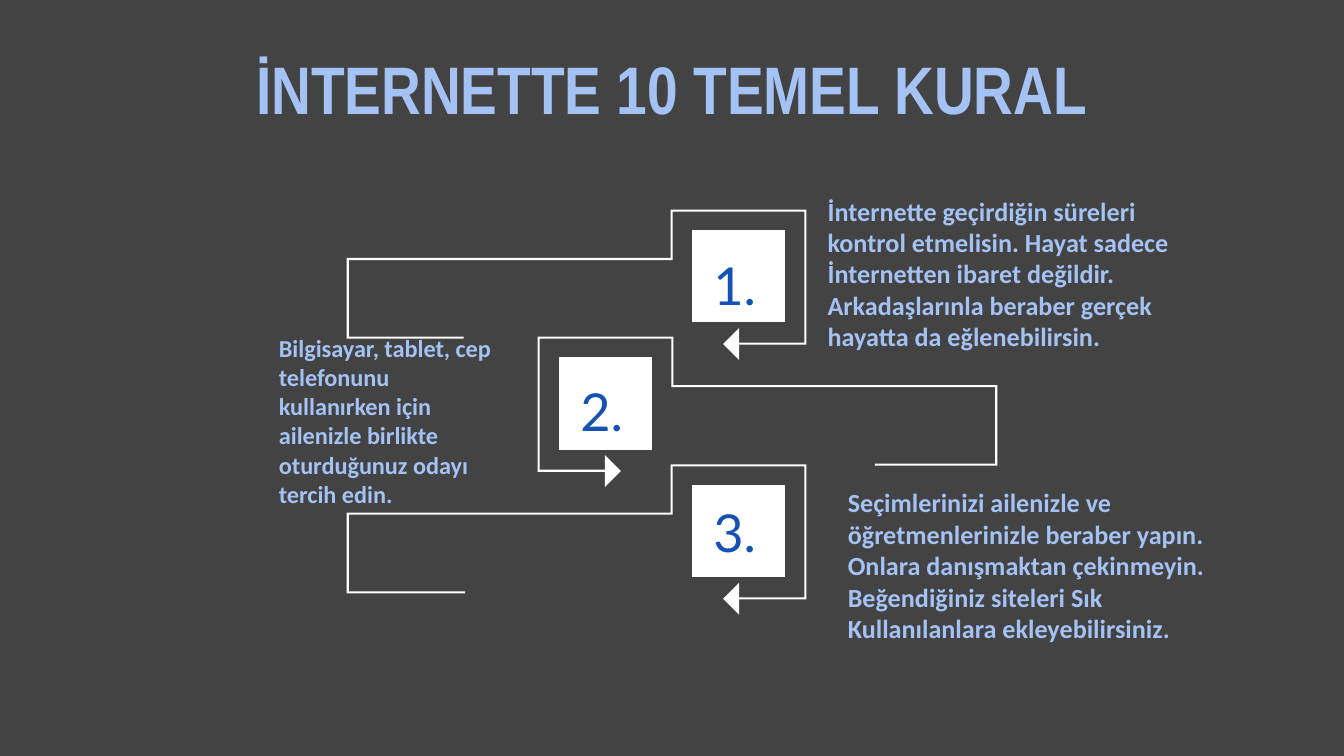
from pptx import Presentation
from pptx.dml.color import RGBColor
from pptx.enum.text import MSO_ANCHOR, MSO_AUTO_SIZE, PP_ALIGN
from pptx.util import Emu, Pt

PX = 4572
SLIDE_W, SLIDE_H = 2000, 1125
BG = RGBColor(0x43, 0x43, 0x43)
WHITE = RGBColor(0xFF, 0xFF, 0xFF)
SKY = RGBColor(0xA4, 0xC2, 0xF4)
BLUE = RGBColor(0x16, 0x52, 0xB6)
TOP, MIDDLE, BOTTOM = MSO_ANCHOR.TOP, MSO_ANCHOR.MIDDLE, MSO_ANCHOR.BOTTOM
GROW, FIXED = MSO_AUTO_SIZE.SHAPE_TO_FIT_TEXT, MSO_AUTO_SIZE.NONE
LEFT, CENTER = PP_ALIGN.LEFT, PP_ALIGN.CENTER

RIBBON_W = 684
SQUARE = 138
NUMBER_W = 114
TITLE_FONT = {"name": "Arial Narrow", "size": Pt(36), "bold": True}
NUMBER_FONT = {"name": "Lato", "size": Pt(28)}
RULE_FONT = {"name": "Calibri", "size": Pt(14), "bold": True}
SMALL_RULE_FONT = {**RULE_FONT, "size": Pt(13)}

STEPS = [
    {"number": "1.", "box": (516, 312), "tail": 174, "number_y": 55, "mirrored": False},
    {"number": "2.", "box": (800, 501), "tail": 182, "number_y": 53, "mirrored": True},
    {"number": "3.", "box": (516, 691), "tail": 176, "number_y": 43, "mirrored": False},
]
RULES = [
    ("İnternette geçirdiğin süreleri kontrol etmelisin. Hayat sadece İnternetten "
     "ibaret değildir. Arkadaşlarınla beraber gerçek hayatta da eğlenebilirsin.",
     (1212, 317, 580, 176), RULE_FONT, (20, 4, 0, 0)),
    ("Bilgisayar, tablet, cep telefonunu kullanırken için ailenizle birlikte "
     "oturduğunuz odayı tercih edin.",
     (375, 547, 384, 154), SMALL_RULE_FONT, (40, 4, 20, 0)),
    ("Seçimlerinizi ailenizle ve öğretmenlerinizle beraber yapın. Onlara danışmaktan "
     "çekinmeyin. Beğendiğiniz siteleri Sık Kullanılanlara ekleyebilirsiniz.",
     (1242, 738, 554, 202), RULE_FONT, (20, 4, 0, 0)),
]


def px(n):
    """Turn px into EMU."""
    return Emu(n * PX)


def add_text(s, text, box, font, color, insets, anchor=TOP, align=LEFT,
             before=0, auto_size=FIXED):
    """Place one paragraph of text in a box."""
    tf = s.shapes.add_textbox(*map(px, box)).text_frame
    left, top, right, bottom = map(px, insets)
    frame = {"margin_left": left, "margin_top": top, "margin_right": right,
             "margin_bottom": bottom, "word_wrap": True,
             "vertical_anchor": anchor, "auto_size": auto_size}
    for key, value in frame.items():
        setattr(tf, key, value)
    p = tf.paragraphs[0]
    p.alignment = align
    p.space_before = Pt(before)
    r = p.add_run()
    r.text = text
    for key, value in font.items():
        setattr(r.font, key, value)
    r.font.color.rgb = color


def add_outline(s, points):
    """Draw a closed white outline through the points."""
    builder = s.shapes.build_freeform(*points[0], scale=PX)
    builder.add_line_segments(points[1:], close=True)
    sp = builder.convert_to_shape()
    sp.shadow.inherit = False
    sp.fill.solid()
    sp.fill.fore_color.rgb = WHITE
    sp.line.fill.background()


def add_step(s, number, box, tail, number_y, mirrored):
    """Draw a numbered square with its ribbon and arrowhead."""
    x, y = box
    near, far = 514, 514 + SQUARE
    square = [(near, 30), (near, 30 + SQUARE), (far, 30 + SQUARE), (far, 30)]
    ribbon = [(482, 0), (482, 72), (0, 72), (0, 192), (tail, 192), (tail, 189),
              (3, 189), (3, 75), (485, 75), (485, 3), (681, 3), (681, 198),
              (582, 198), (582, 201), (RIBBON_W, 201), (RIBBON_W, 0)]
    arrowhead = [(584, 176), (560, 200), (584, 224)]
    for points in (square, ribbon, arrowhead):
        add_outline(s, [(x + (RIBBON_W - dx if mirrored else dx), y + dy)
                        for dx, dy in points])
    number_x = RIBBON_W - 526 - NUMBER_W if mirrored else 526
    add_text(s, number, (x + number_x, y + number_y, NUMBER_W, 112),
             NUMBER_FONT, BLUE, (20, 10, 20, 10), auto_size=GROW)


def add_title(s, box):
    """Place the centred heading."""
    add_text(s, "İNTERNETTE 10 TEMEL KURAL", box, TITLE_FONT, SKY,
             (0, 0, 0, 0), BOTTOM, CENTER)


def add_rule(s, text, box, font, insets):
    """Place the explanation of one rule."""
    add_text(s, text, box, font, SKY, insets, MIDDLE, before=1)


def main():
    """Build the slide and save it."""
    prs = Presentation()
    prs.slide_width, prs.slide_height = px(SLIDE_W), px(SLIDE_H)
    s = prs.slides.add_slide(prs.slide_layouts[6])
    s.background.fill.solid()
    s.background.fill.fore_color.rgb = BG
    add_title(s, (154, 74, 1692, 116))
    for step in STEPS:
        add_step(s, **step)
    for rule in RULES:
        add_rule(s, *rule)
    prs.save("out.pptx")


if __name__ == "__main__":
    main()
